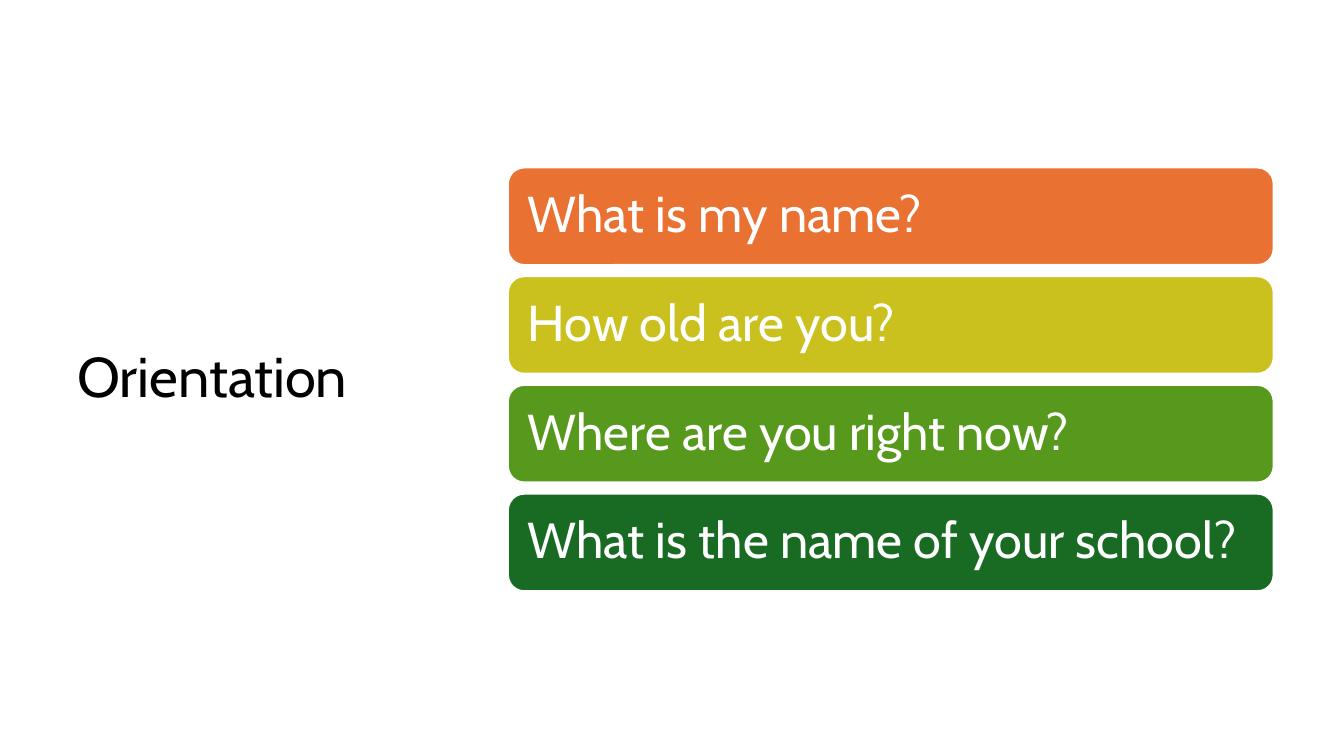
"""Build the Orientation slide with its four question bars."""
from pptx import Presentation
from pptx.dml.color import RGBColor
from pptx.enum.shapes import MSO_SHAPE as Shape
from pptx.enum.text import MSO_ANCHOR as Anchor, PP_ALIGN as Align
from pptx.util import Cm, Pt

BLACK = RGBColor(0x00, 0x00, 0x00)
WHITE = RGBColor(0xFF, 0xFF, 0xFF)
ORANGE = RGBColor(0xE9, 0x71, 0x32)
MUSTARD = RGBColor(0xCB, 0xC1, 0x1E)
LIGHT_GREEN = RGBColor(0x56, 0x99, 0x1D)
DARK_GREEN = RGBColor(0x19, 0x6B, 0x24)

QUESTIONS = [
    ("What is my name?", ORANGE),
    ("How old are you?", MUSTARD),
    ("Where are you right now?", LIGHT_GREEN),
    ("What is the name of your school?", DARK_GREEN),
]
BAR_TOP, BAR_PITCH = 4.22, 2.74


def write(frame, words, size, color):
    frame.word_wrap = True
    frame.vertical_anchor = Anchor.MIDDLE
    paragraph = frame.paragraphs[0]
    paragraph.alignment = Align.LEFT
    paragraph.line_spacing = 0.9
    run = paragraph.add_run()
    run.text = words
    run.font.name = "Cabin"
    run.font.size = Pt(size)
    run.font.color.rgb = color


deck = Presentation()
deck.slide_width, deck.slide_height = Cm(33.87), Cm(19.05)
slide = deck.slides.add_slide(deck.slide_layouts[6])

heading = slide.shapes.add_textbox(Cm(1.7), Cm(1.52), Cm(9.7), Cm(16.08))
write(heading.text_frame, "Orientation", 40, BLACK)

for row, (question, color) in enumerate(QUESTIONS):
    bar = slide.shapes.add_shape(
        Shape.ROUNDED_RECTANGLE,
        Cm(12.8), Cm(BAR_TOP + row * BAR_PITCH), Cm(19.3), Cm(2.46))
    bar.shadow.inherit = False
    bar.fill.solid()
    bar.fill.fore_color.rgb = color
    bar.line.color.rgb = WHITE
    bar.line.width = Pt(1.5)
    frame = bar.text_frame
    frame.margin_left = frame.margin_right = Cm(0.38)
    frame.margin_top = frame.margin_bottom = Cm(0.38)
    write(frame, question, 36, WHITE)

deck.save("out.pptx")
